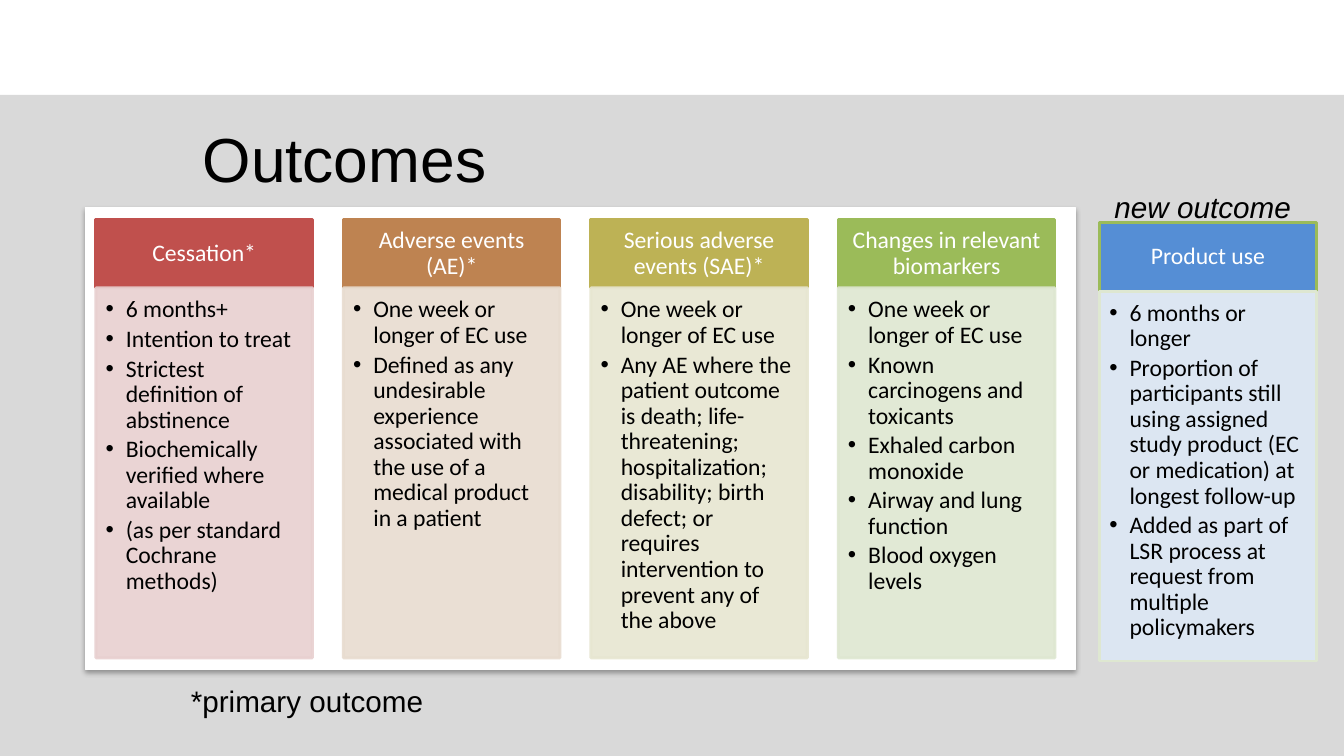
from lxml import etree
from pptx import Presentation
from pptx.dml.color import RGBColor
from pptx.enum.shapes import MSO_SHAPE
from pptx.enum.text import MSO_ANCHOR, PP_ALIGN
from pptx.oxml.ns import qn
from pptx.util import Inches, Pt

RECT = MSO_SHAPE.RECTANGLE
TOP, MIDDLE = MSO_ANCHOR.TOP, MSO_ANCHOR.MIDDLE
LEFT, CENTER = PP_ALIGN.LEFT, PP_ALIGN.CENTER

# Colours
BLACK = RGBColor(0x00, 0x00, 0x00)
WHITE = RGBColor(0xFF, 0xFF, 0xFF)
GREY = RGBColor(0xD9, 0xD9, 0xD9)
RED, PALE_RED = RGBColor(0xC0, 0x50, 0x4D), RGBColor(0xE8, 0xD0, 0xD0)
BROWN, PALE_BROWN = RGBColor(0xBE, 0x83, 0x51), RGBColor(0xE8, 0xDC, 0xD0)
OLIVE, PALE_OLIVE = RGBColor(0xBD, 0xB2, 0x55), RGBColor(0xE7, 0xE6, 0xD1)
GREEN, PALE_GREEN = RGBColor(0x9B, 0xBB, 0x59), RGBColor(0xDE, 0xE7, 0xD1)
BLUE, PALE_BLUE = RGBColor(0x55, 0x8E, 0xD5), RGBColor(0xDC, 0xE6, 0xF2)

# Content
TITLE = "Outcomes"
FOOTNOTE = "*primary outcome"
NEW_LABEL = "new outcome"
OUTCOMES = [
    ("Cessation*", RED, PALE_RED, [
        "6 months+",
        "Intention to treat",
        "Strictest definition of abstinence",
        "Biochemically verified where available",
        "(as per standard Cochrane methods)"]),
    ("Adverse events (AE)*", BROWN, PALE_BROWN, [
        "One week or longer of EC use",
        "Defined as any undesirable experience associated with the use of "
        "a medical product in a patient"]),
    ("Serious adverse events (SAE)*", OLIVE, PALE_OLIVE, [
        "One week or longer of EC use",
        "Any AE where the patient outcome is death; life-threatening; "
        "hospitalization; disability; birth defect; or requires "
        "intervention to prevent any of the above"]),
    ("Changes in relevant biomarkers", GREEN, PALE_GREEN, [
        "One week or longer of EC use",
        "Known carcinogens and toxicants",
        "Exhaled carbon monoxide",
        "Airway and lung function",
        "Blood oxygen levels"]),
]
NEW_OUTCOME = ("Product use", BLUE, PALE_BLUE, [
    "6 months or longer",
    "Proportion of participants still using assigned study product "
    "(EC or medication) at longest follow-up",
    "Added as part of LSR process at request from multiple policymakers"])

# Layout in inches
SLIDE_W, SLIDE_H = 12.6, 7.09
BAND_TOP = 0.89
CARD_LEFT, CARD_TOP, CARD_PITCH = 0.9, 2.06, 2.32
NEW_LEFT, NEW_TOP = 10.31, 2.09
CARD_W, HEAD_H, LIST_H = 2.03, 0.64, 3.47
HEAD_INSETS = (0.12, 0.07, 0.12, 0.07)
LIST_INSETS = (0.09, 0.09, 0.12, 0.14)
LABEL_INSETS = (0.1, 0.08, 0.1, 0.05)
TITLE_INSETS = (0.1, 0.12, 0.1, 0.05)
BULLET_INDENT = 0.19

# Text formats
TITLE_FONT = {"name": "Arial", "size": Pt(42)}
LABEL_FONT = {"name": "Arial", "size": Pt(20)}
CARD_FONT = {"name": "Calibri", "size": Pt(16)}


def set_all(target, values):
    for key, value in values.items():
        setattr(target, key, value)


def add_rect(slide, box, fill, line=None, line_width=2):
    rect = slide.shapes.add_shape(RECT, *map(Inches, box))
    rect.shadow.inherit = False
    rect.fill.solid()
    rect.fill.fore_color.rgb = fill
    if line is None:
        rect.line.fill.background()
    else:
        rect.line.color.rgb = line
        rect.line.width = Pt(line_width)
    return rect


def make_translucent(shape, percent):
    for color in shape.element.spPr.iter(qn("a:srgbClr")):
        etree.SubElement(color, qn("a:alpha"), val=str(percent * 1000))


def add_drop_shadow(shape):
    effects = shape.element.spPr.find(qn("a:effectLst"))
    shadow = etree.SubElement(
        effects, qn("a:outerShdw"), blurRad=str(Pt(3.1)), dist=str(Pt(1.8)),
        dir="5400000", rotWithShape="0")
    color = etree.SubElement(shadow, qn("a:srgbClr"), val=str(BLACK))
    etree.SubElement(color, qn("a:alpha"), val="35000")


def add_bullet(paragraph):
    props = paragraph._p.get_or_add_pPr()
    props.set("marL", str(Inches(BULLET_INDENT)))
    props.set("indent", str(-Inches(BULLET_INDENT)))
    etree.SubElement(props, qn("a:buFont"), typeface="Arial")
    etree.SubElement(props, qn("a:buChar"), char="•")


def write(shape, lines, font, insets, color=BLACK, anchor=TOP, align=LEFT,
          bullets=False, spacing=None):
    frame = shape.text_frame
    margins = ("margin_left", "margin_top", "margin_right", "margin_bottom")
    set_all(frame, dict(zip(margins, map(Inches, insets))))
    set_all(frame, {"word_wrap": True, "vertical_anchor": anchor})
    frame.text = "\n".join(lines)
    for paragraph in frame.paragraphs:
        if bullets:
            add_bullet(paragraph)
        paragraph.alignment = align
        if spacing:
            set_all(paragraph, spacing)
        set_all(paragraph.font, font)
        paragraph.font.color.rgb = color


def add_label(slide, text, box, font):
    label = slide.shapes.add_textbox(*map(Inches, box))
    write(label, [text], font, LABEL_INSETS)


def add_card(slide, left, top, outcome, head_line=None, list_line=None):
    name, head_fill, list_fill, points = outcome
    head = add_rect(slide, (left, top, CARD_W, HEAD_H), head_fill,
                    head_line or head_fill)
    write(head, [name], CARD_FONT, HEAD_INSETS, WHITE, MIDDLE, CENTER,
          spacing={"line_spacing": 0.9})
    details = add_rect(slide, (left, top + HEAD_H, CARD_W, LIST_H), list_fill,
                       list_line or list_fill)
    write(details, points, CARD_FONT, LIST_INSETS, bullets=True,
          spacing={"line_spacing": 0.9, "space_after": Pt(2.7)})
    return details


def main():
    prs = Presentation()
    prs.slide_width, prs.slide_height = Inches(SLIDE_W), Inches(SLIDE_H)
    slide = prs.slides.add_slide(prs.slide_layouts[5])

    # Grey band and white panel
    add_rect(slide, (0, BAND_TOP, SLIDE_W, SLIDE_H - BAND_TOP), GREY)
    panel = add_rect(slide, (0.8, 1.95, 9.28, 4.33), WHITE, WHITE, 0.75)
    add_drop_shadow(panel)

    # Title, brought in front of the band
    title = slide.shapes.title
    set_all(title, {"left": Inches(1.8), "top": Inches(1.01),
                    "width": Inches(6.32), "height": Inches(0.65)})
    write(title, [TITLE], TITLE_FONT, TITLE_INSETS)
    title.element.getparent().append(title.element)

    # Established outcomes
    for index, outcome in enumerate(OUTCOMES):
        details = add_card(slide, CARD_LEFT + index * CARD_PITCH, CARD_TOP,
                           outcome)
        make_translucent(details, 90)
    add_label(slide, FOOTNOTE, (1.69, 6.32, 6.32, 0.65), LABEL_FONT)

    # New outcome
    add_card(slide, NEW_LEFT, NEW_TOP, NEW_OUTCOME, GREEN, PALE_GREEN)
    add_label(slide, NEW_LABEL, (10.35, 1.69, 2.16, 0.65),
              {**LABEL_FONT, "italic": True})

    prs.save("out.pptx")


if __name__ == "__main__":
    main()
